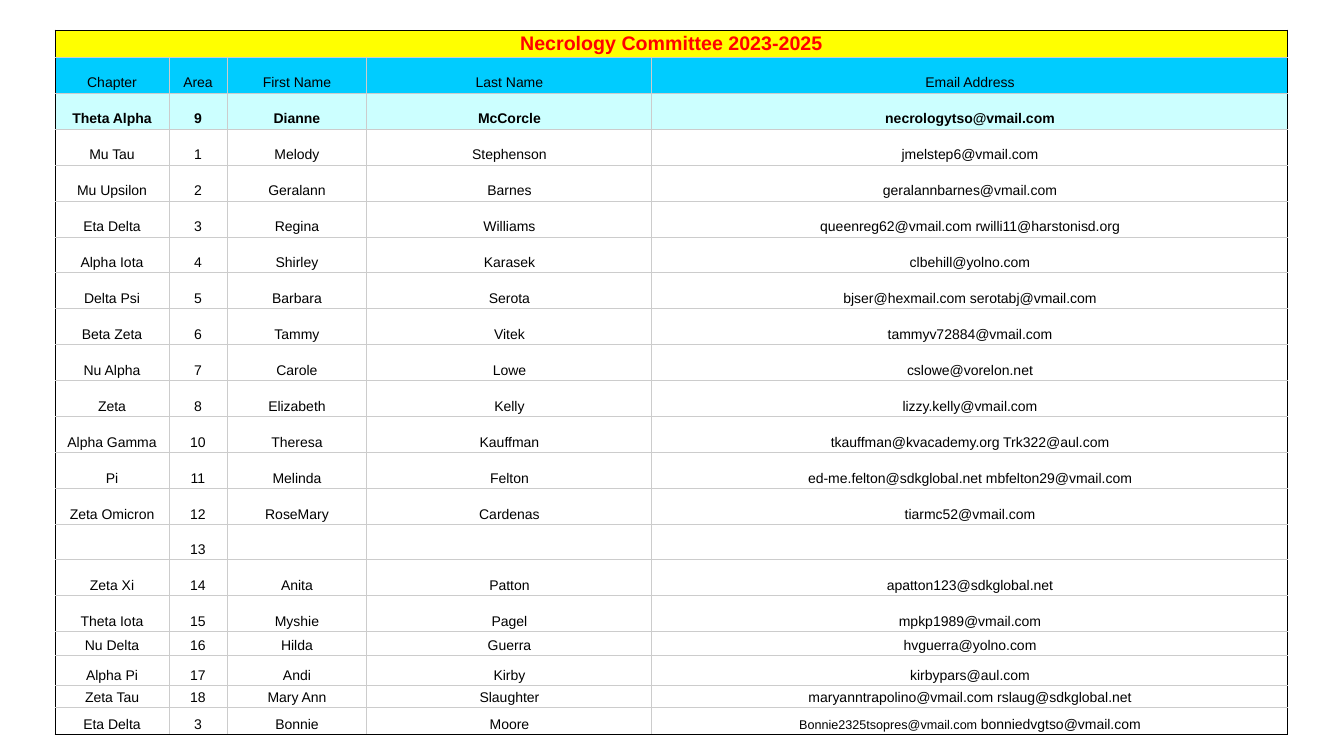
from lxml import etree
from pptx import Presentation, util as u
from pptx.dml.color import RGBColor
from pptx.enum import text
from pptx.oxml.ns import qn

SCALE = 914400 / 100.8
BLACK = RGBColor(0x00, 0x00, 0x00)
GRAY = RGBColor(0xCC, 0xCC, 0xCC)
RED = RGBColor(0xFF, 0x00, 0x00)
YELLOW = RGBColor(0xFF, 0xFF, 0x00)
BLUE = RGBColor(0x00, 0xCC, 0xFF)
PALE = RGBColor(0xCC, 0xFF, 0xFF)

TITLE = "Necrology Committee 2023-2025"
COLS = [114, 58, 140, 285, 636]
ROWS = [27] + [36] * 13 + [33, 36, 36, 24, 30, 22, 27]
FILLS = {0: YELLOW, 1: BLUE, 2: PALE}
MEMBERS = [
    ("Chapter", "Area", "First Name", "Last Name", "Email Address"),
    ("Theta Alpha", "9", "Dianne", "McCorcle", "necrologytso@vmail.com"),
    ("Mu Tau", "1", "Melody", "Stephenson", "jmelstep6@vmail.com"),
    ("Mu Upsilon", "2", "Geralann", "Barnes", "geralannbarnes@vmail.com"),
    ("Eta Delta", "3", "Regina", "Williams",
     "queenreg62@vmail.com rwilli11@harstonisd.org"),
    ("Alpha Iota", "4", "Shirley", "Karasek", "clbehill@yolno.com"),
    ("Delta Psi", "5", "Barbara", "Serota",
     "bjser@hexmail.com serotabj@vmail.com"),
    ("Beta Zeta", "6", "Tammy", "Vitek", "tammyv72884@vmail.com"),
    ("Nu Alpha", "7", "Carole", "Lowe", "cslowe@vorelon.net"),
    ("Zeta", "8", "Elizabeth", "Kelly", "lizzy.kelly@vmail.com"),
    ("Alpha Gamma", "10", "Theresa", "Kauffman",
     "tkauffman@kvacademy.org Trk322@aul.com"),
    ("Pi", "11", "Melinda", "Felton",
     "ed-me.felton@sdkglobal.net mbfelton29@vmail.com"),
    ("Zeta Omicron", "12", "RoseMary", "Cardenas", "tiarmc52@vmail.com"),
    ("", "13", "", "", ""),
    ("Zeta Xi", "14", "Anita", "Patton", "apatton123@sdkglobal.net"),
    ("Theta Iota", "15", "Myshie", "Pagel", "mpkp1989@vmail.com"),
    ("Nu Delta", "16", "Hilda", "Guerra", "hvguerra@yolno.com"),
    ("Alpha Pi", "17", "Andi", "Kirby", "kirbypars@aul.com"),
    ("Zeta Tau", "18", "Mary Ann", "Slaughter",
     "maryanntrapolino@vmail.com rslaug@sdkglobal.net"),
    ("Eta Delta", "3", "Bonnie", "Moore",
     [("Bonnie2325tsopres@vmail.com ", 9), ("bonniedvgtso@vmail.com", 10)]),
]


def px(n):
    return u.Emu(round(n * SCALE))


def write(cell, words, size=10, color=BLACK, bold=False):
    """Fill a cell with one string, or with (string, size) runs."""
    cell.vertical_anchor = text.MSO_ANCHOR.BOTTOM
    cell.margin_left = cell.margin_right = px(3)
    cell.margin_top = cell.margin_bottom = px(2)
    para = cell.text_frame.paragraphs[0]
    para.alignment = text.PP_ALIGN.CENTER
    runs = [(words, size)] if isinstance(words, str) else words
    for part, points in runs:
        if part:
            run = para.add_run()
            run.text = part
            font = run.font
            font.name, font.size, font.bold = "Arial", u.Pt(points), bold
            font.color.rgb = color


def paint(cell, color):
    if color is None:
        cell.fill.background()
    else:
        cell.fill.solid()
        cell.fill.fore_color.rgb = color


def border(cell, row, col):
    """Draw black on the outer edges of the table and gray within."""
    props = cell._tc.get_or_add_tcPr()
    outer = {"lnL": row == 0 or col == 0,
             "lnR": row == 0 or col == len(COLS) - 1,
             "lnT": row == 0, "lnB": row == len(ROWS) - 1}
    for i, (side, dark) in enumerate(outer.items()):
        line = etree.Element(qn("a:" + side), w=str(u.Pt(0.75)))
        fill = etree.SubElement(line, qn("a:solidFill"))
        etree.SubElement(fill, qn("a:srgbClr"), val=str(BLACK if dark else GRAY))
        props.insert(i, line)


def roster(slide, left, top):
    frame = slide.shapes.add_table(len(ROWS), len(COLS), px(left), px(top),
                                   px(sum(COLS)), px(sum(ROWS)))
    table = frame.table
    table.first_row = table.horz_banding = False
    for col, width in zip(table.columns, COLS):
        col.width = px(width)
    for row, height in zip(table.rows, ROWS):
        row.height = px(height)
    for r in range(len(ROWS)):
        for c in range(len(COLS)):
            cell = table.cell(r, c)
            paint(cell, FILLS.get(r))
            border(cell, r, c)
            if r:
                write(cell, MEMBERS[r - 1][c], bold=r == 2)
    head = table.cell(0, 0)
    head.merge(table.cell(0, len(COLS) - 1))
    write(head, TITLE, size=14, color=RED, bold=True)


def main():
    deck = Presentation()
    deck.slide_width, deck.slide_height = px(1344), px(756)
    roster(deck.slides.add_slide(deck.slide_layouts[6]), 55, 30)
    deck.save("out.pptx")


if __name__ == "__main__":
    main()
